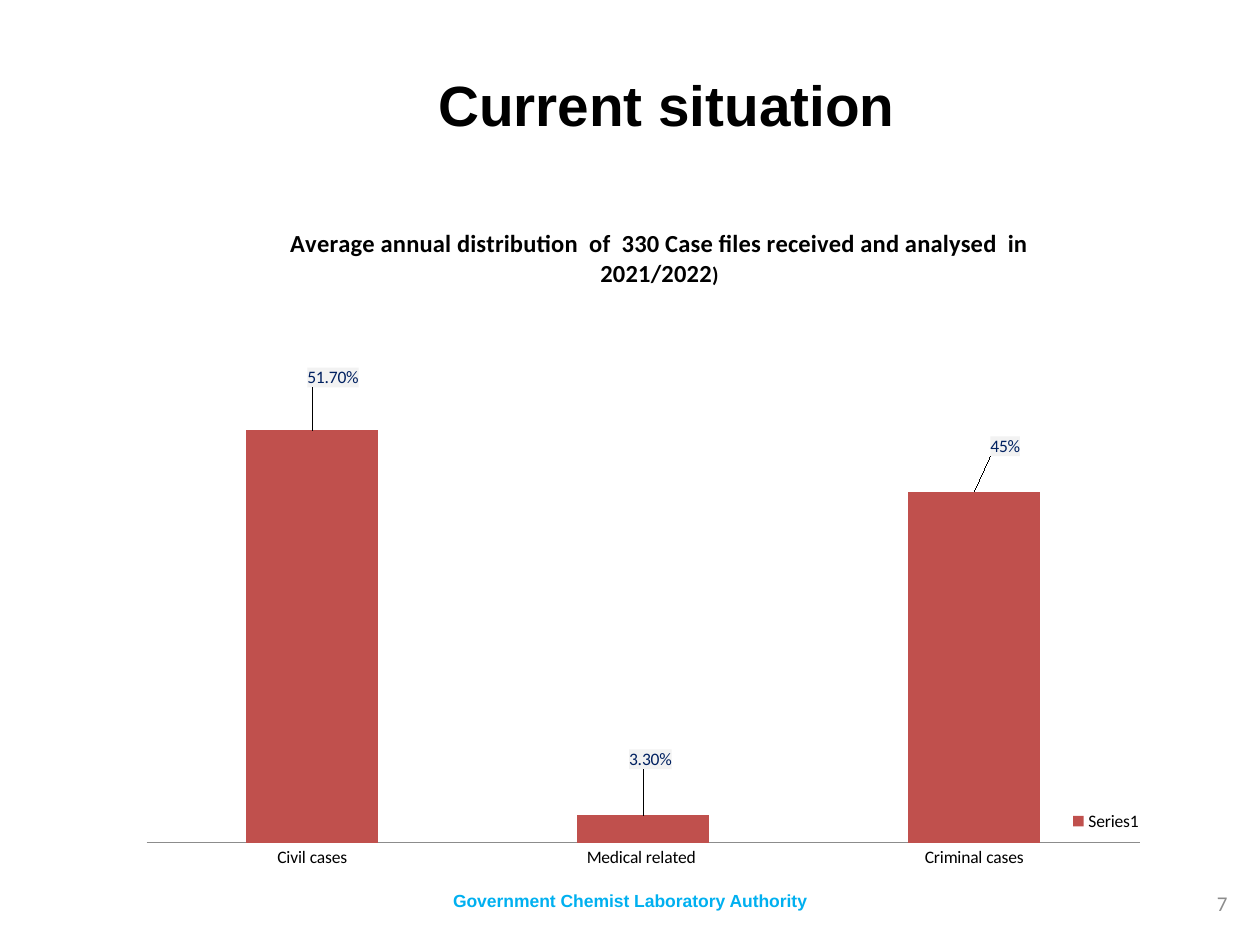
import pptx
import pptx.chart.data
import pptx.dml.color
import pptx.enum.chart
import pptx.enum.text
import pptx.oxml
import pptx.oxml.ns
import pptx.util

RGBColor = pptx.dml.color.RGBColor
Inches = pptx.util.Inches
Pt = pptx.util.Pt
Align = pptx.enum.text.PP_ALIGN
BLACK = RGBColor(0, 0, 0)
CYAN = RGBColor(0x00, 0xB0, 0xF0)
GRAY = RGBColor(0x8C, 0x8C, 0x8C)
RED = RGBColor(0xC0, 0x50, 0x4D)
NAVY = RGBColor(0x00, 0x20, 0x60)
PALE = RGBColor(0xF2, 0xF2, 0xF2)

CASES = [
    ("Civil cases", 0.494, "51.70%", 0.02, -0.055),
    ("Medical related ", 0.033, None, 0.007, -0.06),
    ("Criminal cases", 0.42, "45%", 0.03, -0.045),
]


def chart_xml(markup):
    namespaces = pptx.oxml.ns.nsdecls("c", "a")
    tag, rest = markup.split(">", 1)
    return pptx.oxml.parse_xml(f"{tag} {namespaces}>{rest}")


def layout_xml(edge=False, inner=False, **shares):
    parts = ['<c:layoutTarget val="inner"/>'] if inner else []
    if edge:
        parts += ['<c:xMode val="edge"/>', '<c:yMode val="edge"/>']
    parts += [f'<c:{name} val="{share}"/>' for name, share in shares.items()]
    return chart_xml(f'<c:layout><c:manualLayout>{"".join(parts)}</c:manualLayout></c:layout>')


def place(element, before, layout):
    for old in element.xpath("c:layout"):
        element.remove(old)
    element.xpath(before)[0].addprevious(layout)


def style(font, size, color, bold=False, name="Calibri"):
    font.size, font.bold, font.name = Pt(size), bold, name
    font.color.rgb = color


def fill_text(shape, text, align, *look):
    frame = shape.text_frame
    frame.word_wrap = True
    frame.vertical_anchor = pptx.enum.text.MSO_ANCHOR.MIDDLE
    frame.text = text
    para = frame.paragraphs[0]
    para.alignment = align
    style(para.runs[0].font, *look)


def add_text(page, position, *content):
    box = page.shapes.add_textbox(*map(Inches, position))
    fill_text(box, *content)


def add_title(page):
    title = page.shapes.title
    title.left, title.top, title.width, title.height = map(Inches, (1, 0.49, 8.58, 0.67))
    fill_text(title, "Current situation", Align.CENTER, 32.4, BLACK, True, "Arial")


def add_labels(series):
    for index, (_, _, text, shift_x, shift_y) in enumerate(CASES):
        label = series.points[index].data_label
        if text:
            label.text_frame.text = text
            style(label.text_frame.paragraphs[0].runs[0].font, 10, NAVY)
        else:
            style(label.font, 10, NAVY)
        label.position = pptx.enum.chart.XL_LABEL_POSITION.OUTSIDE_END
        element = series._element.xpath(f".//c:dLbl[c:idx/@val='{index}']")[0]
        place(element, "c:idx/following-sibling::*[1]", layout_xml(x=shift_x, y=shift_y))
        anchor = element.xpath("c:txPr | c:dLblPos")[0]
        anchor.addprevious(chart_xml('<c:numFmt formatCode="0.00%" sourceLinked="0"></c:numFmt>'))
        anchor.addprevious(chart_xml(
            f'<c:spPr><a:solidFill><a:srgbClr val="{PALE}"/></a:solidFill></c:spPr>'))


def add_chart_title(chart):
    frame = chart.chart_title.text_frame
    para = frame.paragraphs[0]
    para.alignment = Align.CENTER
    for text, size in (
        ("Average annual distribution  of  330 Case files received and analysed  in 2021/2022", 14),
        (")", 12),
    ):
        span = para.add_run()
        span.text = text
        style(span.font, size, BLACK, True)
    place(chart.chart_title._element, "c:tx/following-sibling::*[1]",
          layout_xml(edge=True, x=0.155, y=0.04))


def add_case_chart(page):
    data = pptx.chart.data.CategoryChartData(number_format="0.00%")
    data.categories = [case[0] for case in CASES]
    data.add_series("Series1", [case[1] for case in CASES])
    kinds = pptx.enum.chart
    chart = page.shapes.add_chart(
        kinds.XL_CHART_TYPE.COLUMN_CLUSTERED, *map(Inches, (1, 1.55, 8.21, 5.45)), data).chart
    style(chart.font, 10, BLACK)
    add_chart_title(chart)

    plot = chart.plots[0]
    plot.gap_width = 150
    plot.vary_by_categories = False
    series = plot.series[0]
    series.format.fill.solid()
    series.format.fill.fore_color.rgb = RED
    add_labels(series)

    values = chart.value_axis
    values.minimum_scale, values.maximum_scale = 0, 0.6
    values.has_major_gridlines = False
    values.visible = False
    categories = chart.category_axis
    categories.major_tick_mark = kinds.XL_TICK_MARK.NONE
    categories.format.line.color.rgb = GRAY

    chart.has_legend = True
    chart.legend.position = kinds.XL_LEGEND_POSITION.TOP
    chart.legend.include_in_layout = False
    place(chart.legend._element, "c:overlay", layout_xml(edge=True, x=0.91, y=0.89))
    place(chart._chartSpace.xpath("c:chart/c:plotArea")[0], "c:barChart",
          layout_xml(edge=True, inner=True, x=0.02, y=0.213, w=0.96, h=0.73))


def main():
    deck = pptx.Presentation()
    deck.slide_width, deck.slide_height = Inches(10), Inches(7.5)
    page = deck.slides.add_slide(deck.slide_layouts[5])
    add_title(page)
    add_text(page, (2.25, 6.95, 5.5, 0.4), "Government Chemist Laboratory Authority",
             Align.CENTER, 10, CYAN, True, "Arial")
    add_text(page, (7.92, 6.97, 1.92, 0.4), "7", Align.RIGHT, 12, GRAY)
    add_case_chart(page)
    deck.save("out.pptx")


if __name__ == "__main__":
    main()
